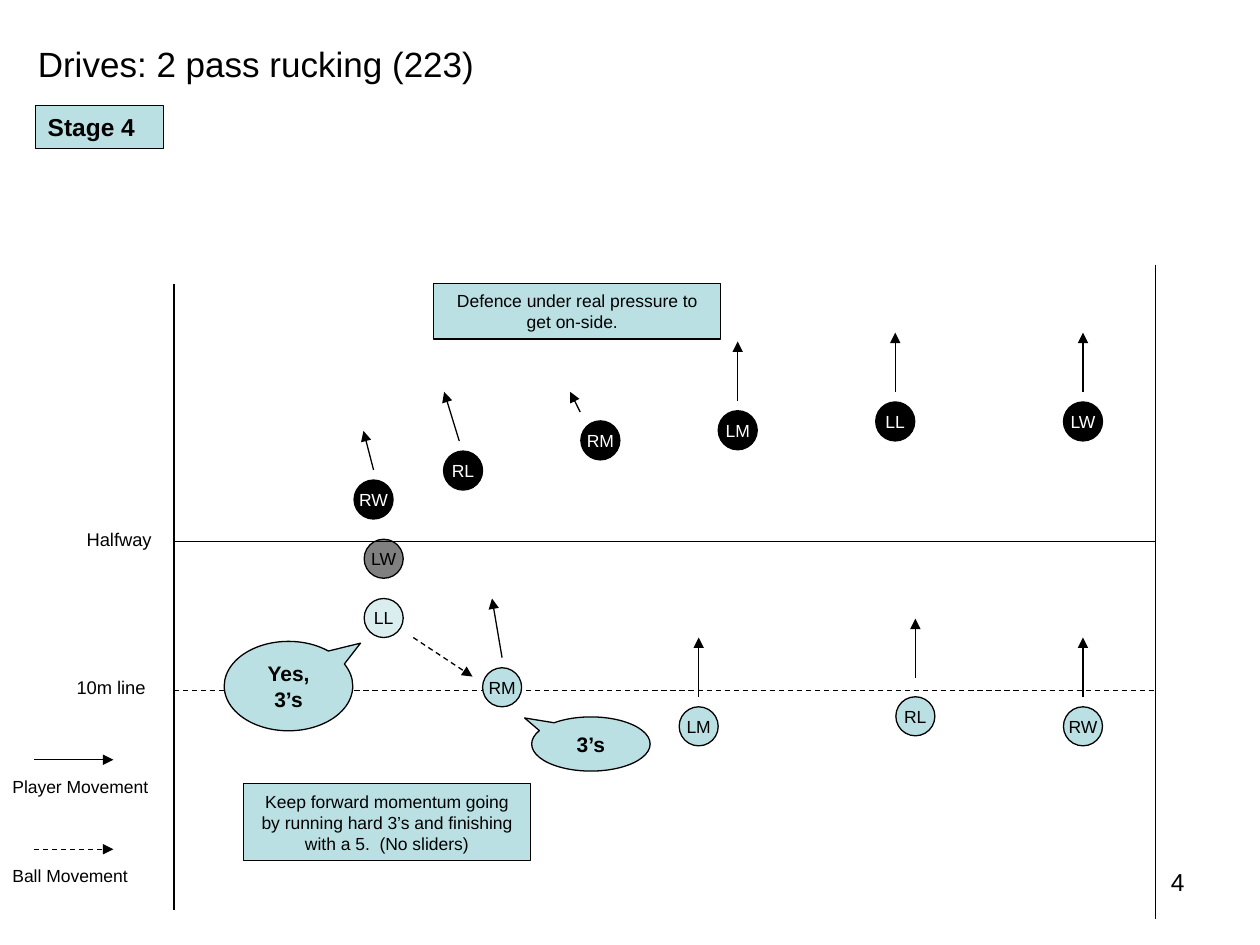
from dataclasses import dataclass
from lxml.etree import SubElement
from pptx import Presentation
from pptx.dml.color import RGBColor as Rgb
from pptx.enum.dml import MSO_LINE as Dash
from pptx.enum.shapes import MSO_CONNECTOR as Conn, MSO_SHAPE as Kind
from pptx.enum.text import MSO_ANCHOR as Anchor, PP_ALIGN as Align
from pptx.oxml.ns import qn
from pptx.util import Inches, Pt


@dataclass(frozen=True)
class Theme:
    font: str = "Arial"
    ink: str = "000000"
    white: str = "FFFFFF"
    aqua: str = "BBE0E3"
    pale: str = "DAEDEF"
    grey: str = "808080"
    line: float = 0.75
    small: float = 10
    label: float = 10.5
    call: float = 12
    stage: float = 14
    title: float = 20


class Board:
    def __init__(self, slide, theme):
        self.slide = slide
        self.shapes = slide.shapes
        self.theme = theme

    def letter(self, shape, text, size, color=None, bold=False,
               align=Align.LEFT, anchor=Anchor.TOP, wrap=True):
        frame = shape.text_frame
        frame.word_wrap = wrap
        frame.vertical_anchor = anchor
        para = frame.paragraphs[0]
        para.alignment = align
        run = para.add_run()
        run.text = text
        font = run.font
        font.name, font.size, font.bold = self.theme.font, Pt(size), bold
        font.color.rgb = Rgb.from_string(color or self.theme.ink)

    def title(self, box, text):
        shape = self.shapes.title
        shape.left, shape.top, shape.width, shape.height = map(Inches, box)
        self.letter(shape, text, self.theme.title, wrap=False)

    def text(self, box, text, size, **style):
        shape = self.shapes.add_textbox(*map(Inches, box))
        self.letter(shape, text, size, **style)

    def shape(self, kind, box, fill, text, size, **style):
        shape = self.shapes.add_shape(kind, *map(Inches, box))
        shape.shadow.inherit = False
        shape.fill.solid()
        shape.fill.fore_color.rgb = Rgb.from_string(fill)
        shape.line.color.rgb = Rgb.from_string(self.theme.ink)
        shape.line.width = Pt(self.theme.line)
        self.letter(shape, text, size, **style)
        return shape

    def line(self, start, end, dash=False, arrow=False):
        line = self.shapes.add_connector(
            Conn.STRAIGHT, *map(Inches, (*start, *end)))
        line.line.color.rgb = Rgb.from_string(self.theme.ink)
        line.line.width = Pt(self.theme.line)
        if dash:
            line.line.dash_style = Dash.DASH
        props = line.element.spPr
        if arrow:
            SubElement(props.find(qn("a:ln")), qn("a:tailEnd"),
                       type="triangle")
        SubElement(props, qn("a:effectLst"))

    def player(self, name, left, top, fill, color, run=None, shift=(0, -0.08)):
        """Draw a disc; run is the arrow's vector, shift its start from the disc's top."""
        size = 0.31
        self.shape(Kind.OVAL, (left, top, size, size), fill, name,
                   self.theme.small, color=color, align=Align.CENTER,
                   anchor=Anchor.MIDDLE, wrap=False)
        if run:
            x, y = left + size / 2 + shift[0], top + shift[1]
            self.line((x, y), (x + run[0], y + run[1]), arrow=True)

    def call(self, box, text, tip):
        shape = self.shape(Kind.OVAL_CALLOUT, box, self.theme.aqua, text,
                           self.theme.call, bold=True, align=Align.CENTER,
                           anchor=Anchor.MIDDLE)
        for i, value in enumerate(tip):
            shape.adjustments[i] = value

    def note(self, box, text):
        self.shape(Kind.RECTANGLE, box, self.theme.aqua, text,
                   self.theme.small, align=Align.CENTER, anchor=Anchor.MIDDLE)


def main():
    deck = Presentation()
    deck.slide_width, deck.slide_height = Inches(10), Inches(7.5)
    theme = Theme()
    board = Board(deck.slides.add_slide(deck.slide_layouts[5]), theme)

    board.title((0.2, 0.29, 3.69, 0.44), "Drives: 2 pass rucking (223)")
    board.shape(Kind.RECTANGLE, (0.28, 0.84, 1.02, 0.34), theme.aqua,
                "Stage 4", theme.stage, bold=True)

    west, east, half, ten = 1.38, 9.17, 4.3, 5.48
    board.line((west, 2.25), (west, 7.22))
    board.line((east, 2.1), (east, 7.29))
    board.line((west, ten), (east, ten), dash=True)

    ahead = (0, -0.47)
    attack = [
        ("RM", 3.83, 5.3, (-0.08, -0.47)),
        ("LM", 5.39, 5.61, ahead),
        ("RL", 7.11, 5.53, ahead, (0, -0.15)),
        ("RW", 8.44, 5.61, ahead),
    ]
    defence = [
        ("LW", 8.44, 3.19, ahead),
        ("LL", 6.95, 3.19, ahead),
        ("LM", 5.7, 3.26, ahead),
        ("RM", 4.61, 3.34, (-0.08, -0.16), (-0.16, -0.07)),
        ("RL", 3.52, 3.58, (-0.12, -0.39), (-0.03, -0.08)),
        ("RW", 2.81, 3.81, (-0.08, -0.31)),
    ]
    board.player("LW", 2.89, 4.28, theme.grey, theme.ink)
    board.player("LL", 2.89, 4.75, theme.pale, theme.ink)
    for team, fill, color in ((attack, theme.aqua, theme.ink),
                              (defence, theme.ink, theme.white)):
        for name, left, top, *move in team:
            board.player(name, left, top, fill, color, *move)
    board.line((west, half), (east, half))
    board.line((3.28, 5.06), (3.75, 5.37), dash=True, arrow=True)

    board.call((4.22, 5.69, 0.94, 0.43), "3’s", (-0.56, -0.48))
    board.call((1.78, 5.09, 1.02, 0.71), "Yes, 3’s", (0.56, -0.48))
    board.note((3.44, 2.25, 2.28, 0.44),
               "Defence under real pressure to get on-side.  ")
    board.note((1.93, 6.22, 2.28, 0.61),
               "Keep forward momentum going by running hard 3’s "
               "and finishing with a 5.  (No sliders)")

    for name, y, width, dash in (("Player Movement", 6.03, 1.28, False),
                                 ("Ball Movement", 6.74, 1.12, True)):
        board.line((0.27, y), (0.9, y), dash=dash, arrow=True)
        board.text((0, y + 0.08, width, 0.27), name, theme.small, wrap=False)
    board.text((0.59, 4.14, 0.73, 0.28), "Halfway", theme.label, wrap=False)
    board.text((0.51, 5.32, 0.76, 0.28), "10m line", theme.label, wrap=False)
    board.text((7.17, 6.83, 2.33, 0.52), "4", theme.stage, align=Align.RIGHT)

    deck.save("out.pptx")


if __name__ == "__main__":
    main()
